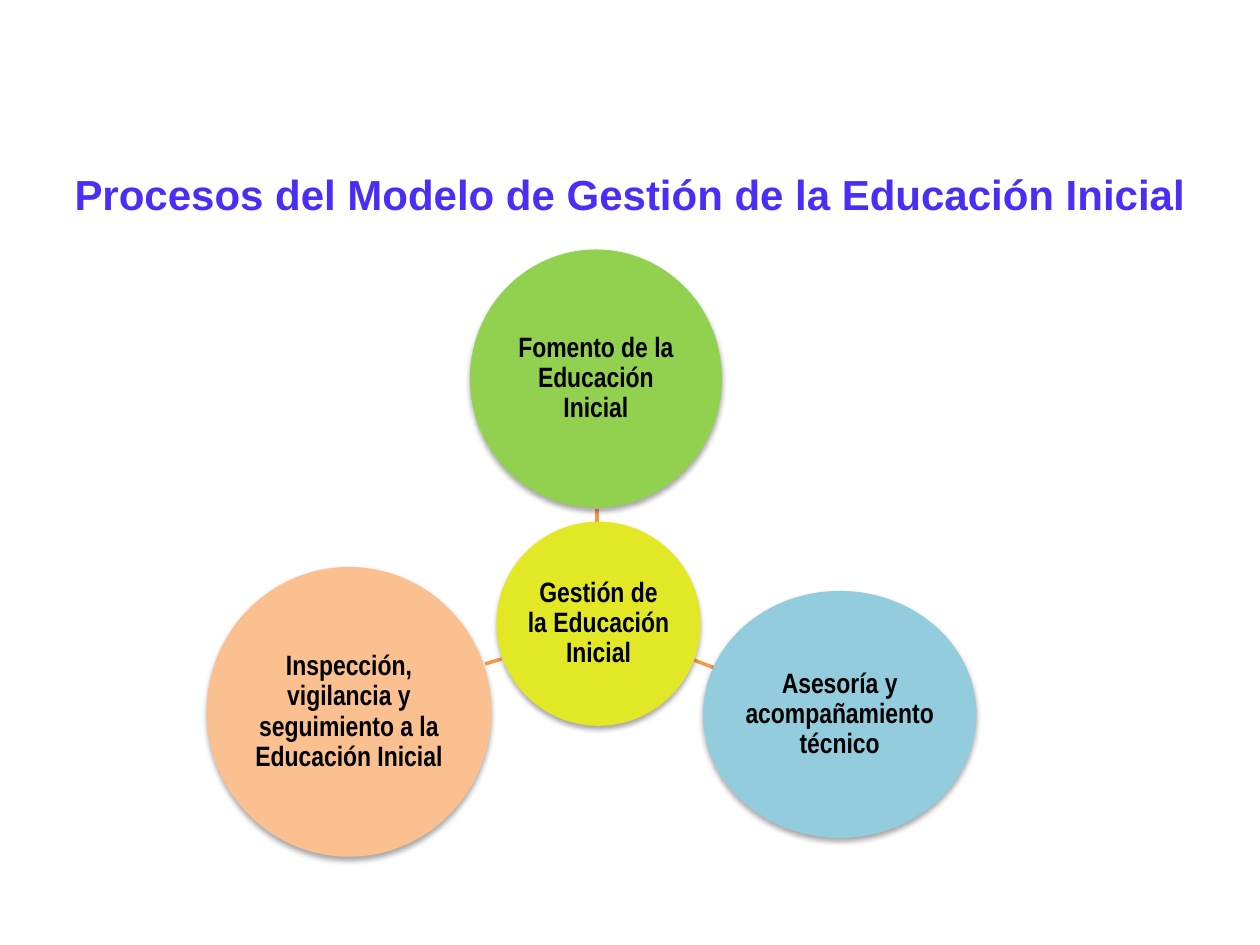
"""Build the slide on the management processes of early education."""
from lxml import etree
from pptx import Presentation
from pptx import util as u
from pptx.dml import color
from pptx.enum import shapes, text
from pptx.oxml import ns

THEME = {
    "title": {"name": "Arial", "size": u.Pt(24), "bold": True},
    "label": {"name": "Arial Narrow", "size": u.Pt(16), "bold": True},
    "violet": "4B2EF6", "black": "000000", "orange": "F79646",
    "yellow": "E3E826", "green": "92D050", "blue": "93CDDD", "peach": "FAC090",
}
SHADOW = {"blurRad": u.Pt(3.1), "dist": u.Pt(1.8), "dir": 90 * 60000, "rotWithShape": 0}


def write(shape, words, style, tint, inset, spacing):
    frame = shape.text_frame
    frame_format = {"word_wrap": True, "vertical_anchor": text.MSO_ANCHOR.MIDDLE}
    frame_format.update({f"margin_{side}": u.Pt(inset) for side in ("left", "top", "right", "bottom")})
    for name, value in frame_format.items():
        setattr(frame, name, value)
    para = frame.paragraphs[0]
    para.alignment = text.PP_ALIGN.CENTER
    para.line_spacing = spacing
    span = para.add_run()
    span.text = words
    for name, value in THEME[style].items():
        setattr(span.font, name, value)
    span.font.color.rgb = color.RGBColor.from_string(THEME[tint])


def effects(shape):
    return etree.SubElement(shape._element.spPr, ns.qn("a:effectLst"))


deck = Presentation()
deck.slide_width, deck.slide_height = u.Pt(720), u.Pt(540)
page = deck.slides.add_slide(deck.slide_layouts[6])

title = page.shapes.add_textbox(u.Pt(0), u.Pt(71.28), u.Pt(720), u.Pt(79.2))
write(title, "Procesos del Modelo de Gestión de la Educación Inicial", "title", "violet", 3.6, 1.0)

links = [
    (341.28, 298.08, 341.28, 290.88),
    (396.72, 377.28, 408.24, 381.6),
    (286.56, 376.56, 277.2, 379.44),
]
for ends in links:
    link = page.shapes.add_connector(shapes.MSO_CONNECTOR.STRAIGHT, *map(u.Pt, ends))
    link.line.color.rgb = color.RGBColor.from_string(THEME["orange"])
    link.line.width = u.Pt(2)
    effects(link)

circles = [
    ("Gestión de la Educación Inicial", "yellow", (283.68, 298.08, 116.64, 116.64)),
    ("Fomento de la Educación Inicial", "green", (268.56, 142.56, 144, 147.6)),
    ("Asesoría y acompañamiento técnico", "blue", (401.76, 337.68, 156.24, 141.12)),
    ("Inspección, vigilancia y seguimiento a la Educación Inicial", "peach", (118.08, 324, 162.72, 165.6)),
]
for words, tint, place in circles:
    circle = page.shapes.add_shape(shapes.MSO_SHAPE.OVAL, *map(u.Pt, place))
    circle.fill.solid()
    circle.fill.fore_color.rgb = color.RGBColor.from_string(THEME[tint])
    circle.line.fill.background()
    shade = etree.SubElement(effects(circle), ns.qn("a:outerShdw"))
    for name, value in SHADOW.items():
        shade.set(name, str(value))
    tone = etree.SubElement(shade, ns.qn("a:srgbClr"), val=THEME["black"])
    etree.SubElement(tone, ns.qn("a:alpha"), val="35000")
    write(circle, words, "label", "black", 0.72, 0.9)

deck.save("out.pptx")
